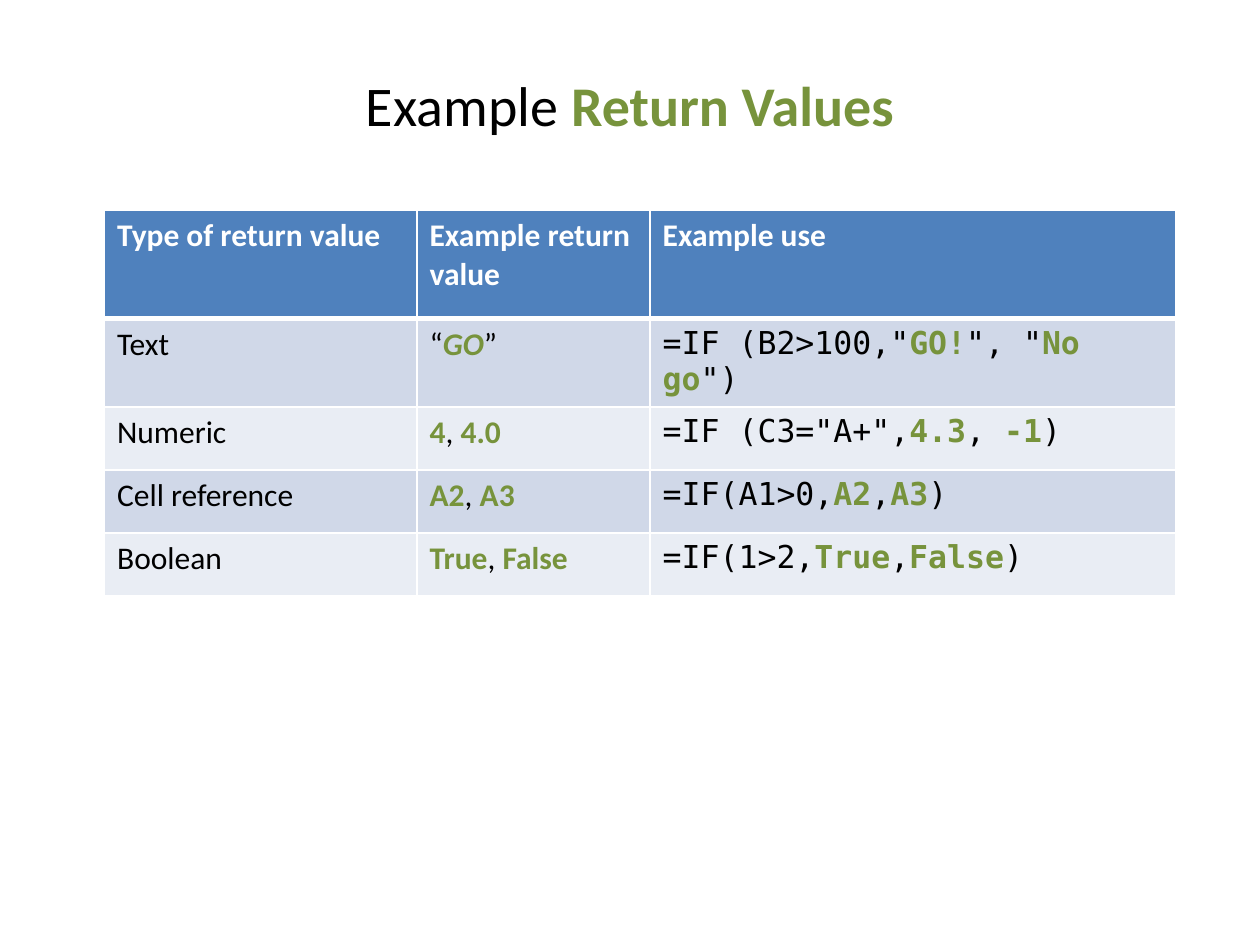
from pptx import Presentation
from pptx.dml.color import RGBColor
from pptx.enum.text import MSO_ANCHOR, PP_ALIGN
from pptx.oxml import parse_xml
from pptx.oxml.ns import nsdecls
from pptx.util import Inches, Pt

BLACK = RGBColor(0x00, 0x00, 0x00)
WHITE = RGBColor(0xFF, 0xFF, 0xFF)
GREEN = RGBColor(0x77, 0x93, 0x3C)
BLUE = RGBColor(0x4F, 0x81, 0xBD)
BANDS = [RGBColor(0xD0, 0xD8, 0xE8), RGBColor(0xE9, 0xED, 0xF4)]
BODY, MONO = "Calibri", "DejaVu Sans Mono"

ROWS = [
    ["Type of return value", "Example return value", "Example use"],
    ["Text", "“|_GO|”", '=IF (B2>100,"|GO!|", "|No go|")'],
    ["Numeric", "|4|, |4.0", '=IF (C3="A+",|4.3|,| -1|)'],
    ["Cell reference", "|A2|, |A3", "=IF(A1>0,|A2|,|A3|)"],
    ["Boolean", "|True|, |False", "=IF(1>2,|True|,|False|)"],
]


class Deck:
    """Slide style and builders; text between bars is highlighted, a leading underscore adds italics."""

    def __init__(self, width, height):
        self.prs = Presentation()
        self.prs.slide_width, self.prs.slide_height = Inches(width), Inches(height)
        self.s = self.prs.slides.add_slide(self.prs.slide_layouts[6])

    def box(self, x, y, w, h):
        width, height = self.prs.slide_width, self.prs.slide_height
        return int(x * width), int(y * height), int(w * width), int(h * height)

    def add_text(self, tf, text, size, font=BODY, color=BLACK, bold=False):
        p = tf.paragraphs[0]
        p.font.name, p.font.size = font, Pt(size)
        for i, part in enumerate(text.split("|")):
            if not part:
                continue
            r = p.add_run()
            r.text = part.lstrip("_")
            r.font.name, r.font.size = font, Pt(size)
            r.font.bold = bold or i % 2 == 1
            r.font.italic = part.startswith("_")
            r.font.color.rgb = GREEN if i % 2 else color
        return p

    def title(self, text, *share):
        tf = self.s.shapes.add_textbox(*self.box(*share)).text_frame
        tf.word_wrap = True
        tf.vertical_anchor = MSO_ANCHOR.MIDDLE
        self.add_text(tf, text, 32).alignment = PP_ALIGN.CENTER

    def borders(self, cell, bottom):
        tc_pr = cell._tc.get_or_add_tcPr()
        for side, width in (("L", 1), ("R", 1), ("T", 1), ("B", bottom)):
            tc_pr.append(parse_xml(
                f'<a:ln{side} {nsdecls("a")} w="{Pt(width)}"><a:solidFill>'
                f'<a:srgbClr val="{WHITE}"/></a:solidFill></a:ln{side}>'))

    def table(self, rows, widths, heights, *share):
        tbl = self.s.shapes.add_table(len(rows), len(widths), *self.box(*share)).table
        for column, width in zip(tbl.columns, widths):
            column.width = Inches(width)
        for i, (row, height) in enumerate(zip(rows, heights)):
            tbl.rows[i].height = Inches(height)
            header = i == 0
            for j, text in enumerate(row):
                cell = tbl.cell(i, j)
                self.borders(cell, 3 if header else 1)
                cell.fill.solid()
                cell.fill.fore_color.rgb = BLUE if header else BANDS[(i - 1) % 2]
                font = MONO if j == 2 and not header else BODY
                self.add_text(cell.text_frame, text, 18, font, WHITE if header else BLACK, header)


def main():
    deck = Deck(10, 7.5)
    deck.title("Example |Return Values", 0.05, 0.04, 0.9, 0.14)
    deck.table(ROWS, [2.48, 1.85, 4.17], [0.86] + [0.5] * 4, 0.08 + 0.03 / 10, 1.67 / 7.5, 0.85, 2.86 / 7.5)
    deck.prs.save("out.pptx")


if __name__ == "__main__":
    main()
